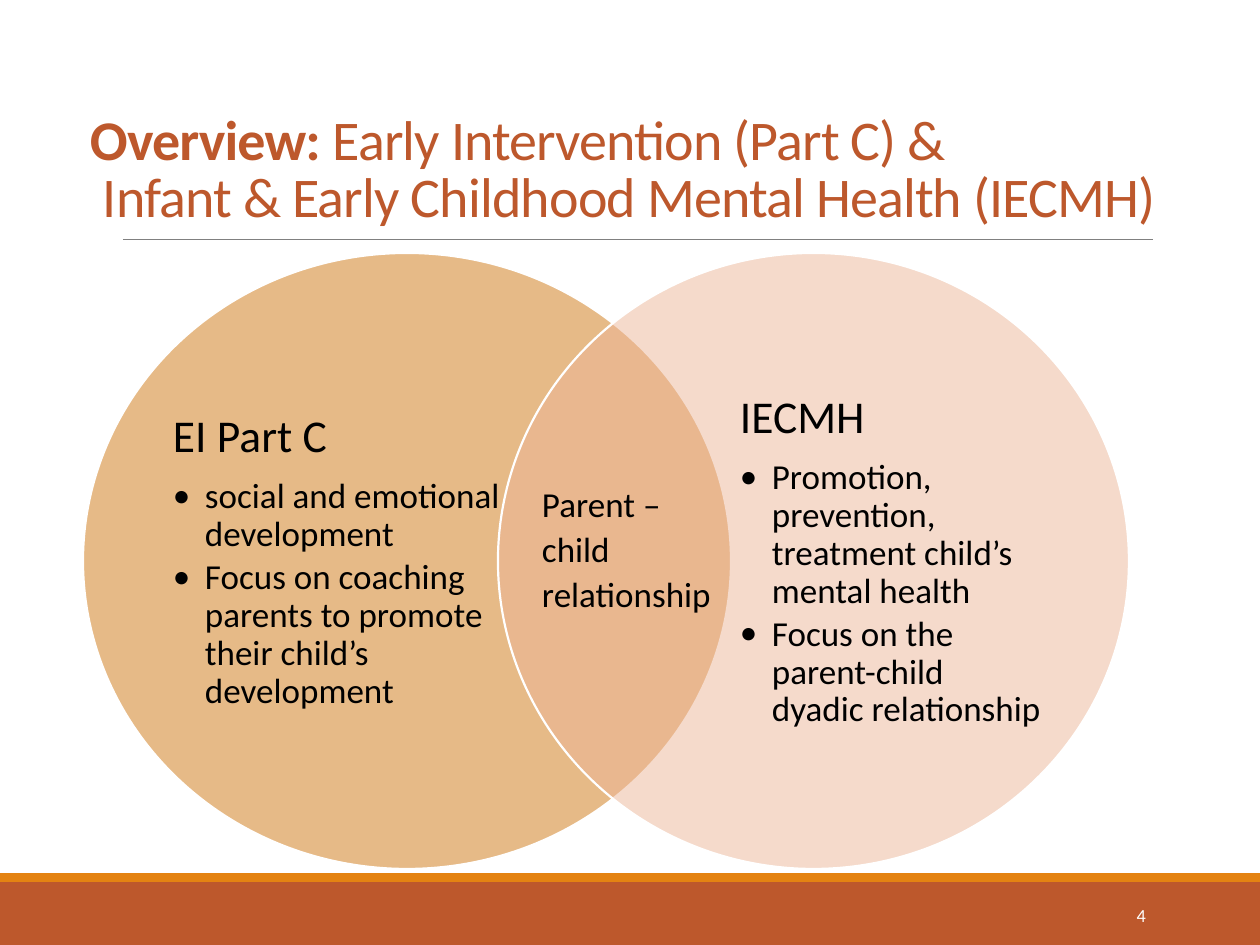
import pptx
import pptx.util
import pptx.dml.color
import pptx.enum.shapes
import pptx.enum.text
import pptx.oxml
import pptx.oxml.ns
import lxml.etree

RGBColor = pptx.dml.color.RGBColor
RUST = RGBColor(0xBD, 0x58, 0x2C)
ORANGE = RGBColor(0xE4, 0x83, 0x12)
OCHRE = RGBColor(0xCF, 0x77, 0x10)
PEACH = RGBColor(0xEC, 0xB6, 0x98)
GRAY = RGBColor(0x80, 0x80, 0x80)
BLACK = RGBColor(0, 0, 0)
WHITE = RGBColor(0xFF, 0xFF, 0xFF)

ANCHOR = pptx.enum.text.MSO_ANCHOR
ALIGN = pptx.enum.text.PP_ALIGN
SHAPE = pptx.enum.shapes.MSO_SHAPE
PX_PER_INCH = 126


def px(length):
    return pptx.util.Emu(round(length * 914400 / PX_PER_INCH))


def add_child(parent, tag, **attributes):
    return lxml.etree.SubElement(parent, pptx.oxml.ns.qn(tag), attributes)


class SlideBuilder:
    font_name = "Calibri"
    bullet_indent = 32

    def __init__(self, slide):
        self.slide = slide

    def shape(self, kind, box, fill, outline=None, opacity=100):
        shape = self.slide.shapes.add_shape(kind, *map(px, box))
        shape.shadow.inherit = False
        shape.fill.solid()
        shape.fill.fore_color.rgb = fill
        if opacity < 100:
            color = shape.fill._xPr.find(".//" + pptx.oxml.ns.qn("a:srgbClr"))
            add_child(color, "a:alpha", val=str(opacity * 1000))
        if outline is None:
            shape.line.fill.background()
        else:
            shape.line.color.rgb = outline
            shape.line.width = pptx.util.Pt(1.25)

    def rule(self, left, right, y, color):
        rule = self.slide.shapes.add_connector(
            pptx.enum.shapes.MSO_CONNECTOR.STRAIGHT, px(left), px(y), px(right), px(y))
        rule.line.color.rgb = color
        rule.line.width = pptx.util.Pt(0.5)
        add_child(rule._element.spPr, "a:effectLst")

    def text_box(self, box, anchor=ANCHOR.MIDDLE, insets=(13, 6, 13, 6)):
        frame = self.slide.shapes.add_textbox(*map(px, box)).text_frame
        frame.word_wrap = True
        frame.vertical_anchor = anchor
        (frame.margin_left, frame.margin_top,
         frame.margin_right, frame.margin_bottom) = map(px, insets)
        return frame

    def style(self, paragraph, size, color, spacing=1.0, after=0, align=ALIGN.LEFT):
        paragraph.alignment = align
        paragraph.line_spacing = spacing
        paragraph.space_after = pptx.util.Pt(after)
        paragraph.font.name = self.font_name
        paragraph.font.size = pptx.util.Pt(size)
        paragraph.font.color.rgb = color

    def indent(self, paragraph, left, first):
        properties = paragraph._p.get_or_add_pPr()
        properties.set("marL", str(px(left)))
        properties.set("indent", str(px(first)))
        return properties

    def title_run(self, paragraph, text, bold=False):
        run = paragraph.add_run()
        run.text = text
        run.font.bold = bold
        run.font._element.set("spc", "-50")

    def title(self, box, lead, first_line, second_line):
        paragraph = self.text_box(box, ANCHOR.BOTTOM).paragraphs[0]
        self.indent(paragraph, 69, -13)
        self.style(paragraph, 32, RUST, 0.85)
        self.title_run(paragraph, lead, bold=True)
        self.title_run(paragraph, first_line)
        paragraph.add_line_break()
        self.title_run(paragraph, second_line)

    def label(self, box, text, size, color, anchor=ANCHOR.MIDDLE,
              insets=(13, 6, 13, 6), **style):
        paragraph = self.text_box(box, anchor, insets).paragraphs[0]
        paragraph.text = text
        self.style(paragraph, size, color, **style)

    def topic(self, box, insets, heading, points):
        frame = self.text_box(box, insets=insets)
        frame.paragraphs[0].text = heading
        self.style(frame.paragraphs[0], 26, BLACK, 0.9, 9.1)
        for point in points:
            paragraph = frame.add_paragraph()
            paragraph.text = point
            properties = self.indent(paragraph, self.bullet_indent, -self.bullet_indent)
            add_child(properties, "a:buFont", typeface=self.font_name)
            add_child(properties, "a:buChar", char="•")
            self.style(paragraph, 20, BLACK, 0.9, 3)


def main():
    deck = pptx.Presentation()
    deck.slide_width, deck.slide_height = px(1260), px(945)
    page = SlideBuilder(deck.slides.add_slide(deck.slide_layouts[6]))

    page.shape(SHAPE.RECTANGLE, (0, 882, 1260, 63), RUST)
    page.shape(SHAPE.RECTANGLE, (0, 873, 1260, 9), ORANGE)
    page.rule(123, 1153, 239, GRAY)
    page.title((21, 42, 1216, 193), "Overview:", " Early Intervention (Part C) &",
               "Infant & Early Childhood Mental Health (IECMH)")

    page.shape(SHAPE.OVAL, (83, 253, 648, 616), OCHRE, WHITE, 50)
    page.topic((173, 327, 373, 470), (0, 0, 25, 0), "EI Part C", [
        "social and emotional development",
        "Focus on coaching parents to promote their child’s development",
    ])
    page.shape(SHAPE.OVAL, (498, 253, 631, 616), PEACH, WHITE, 50)
    page.topic((677, 327, 366, 470), (63, 0, 0, 0), "IECMH", [
        "Promotion, prevention, treatment child’s mental health",
        "Focus on the parent-child dyadic relationship",
    ])
    page.label((533, 475, 194, 178), "Parent – child relationship", 20, BLACK,
               ANCHOR.TOP, (9, 5, 9, 5), spacing=1.07, after=6)
    page.label((1023, 890, 136, 50), "4", 10.5, WHITE, align=ALIGN.RIGHT)

    deck.save("out.pptx")


if __name__ == "__main__":
    main()
